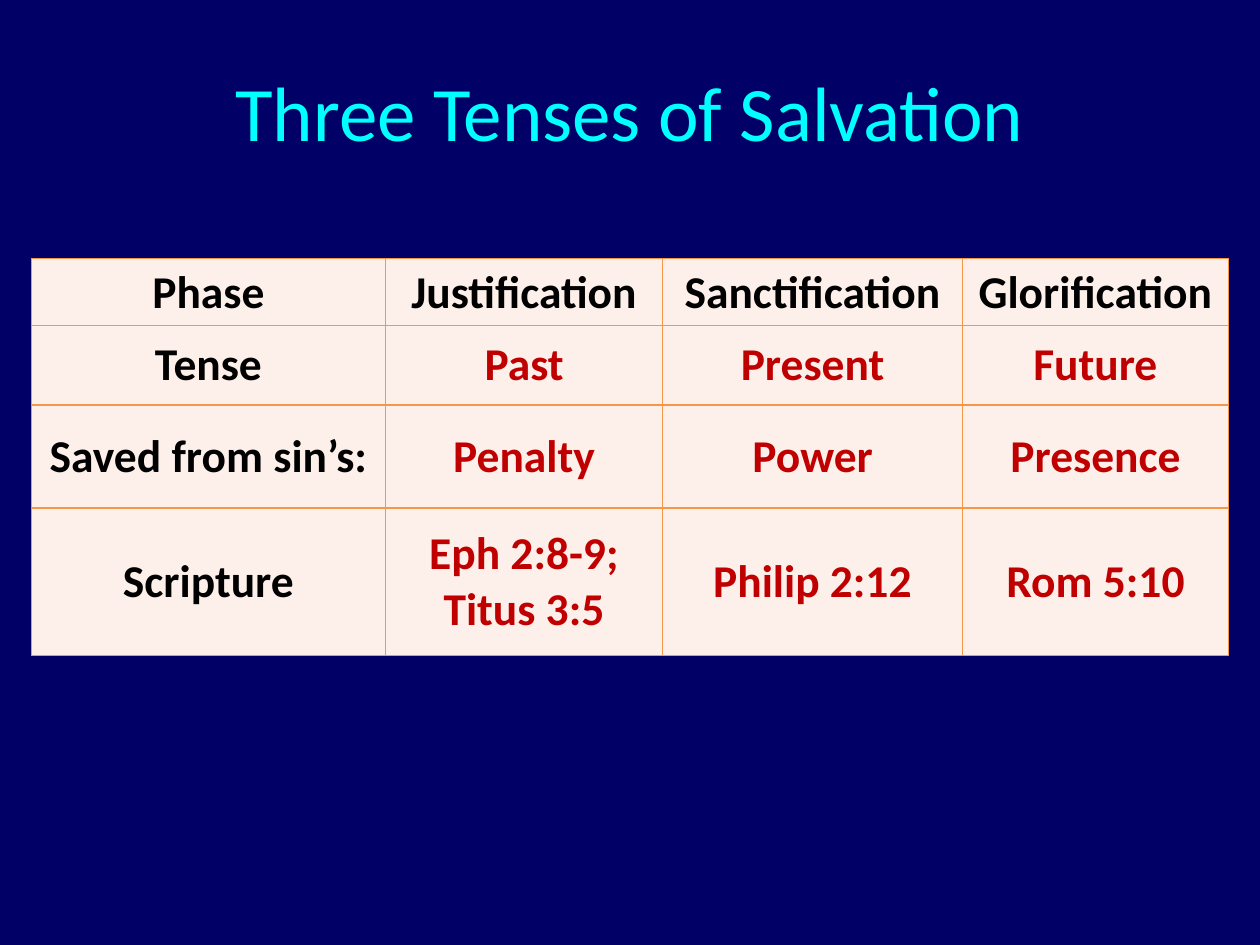
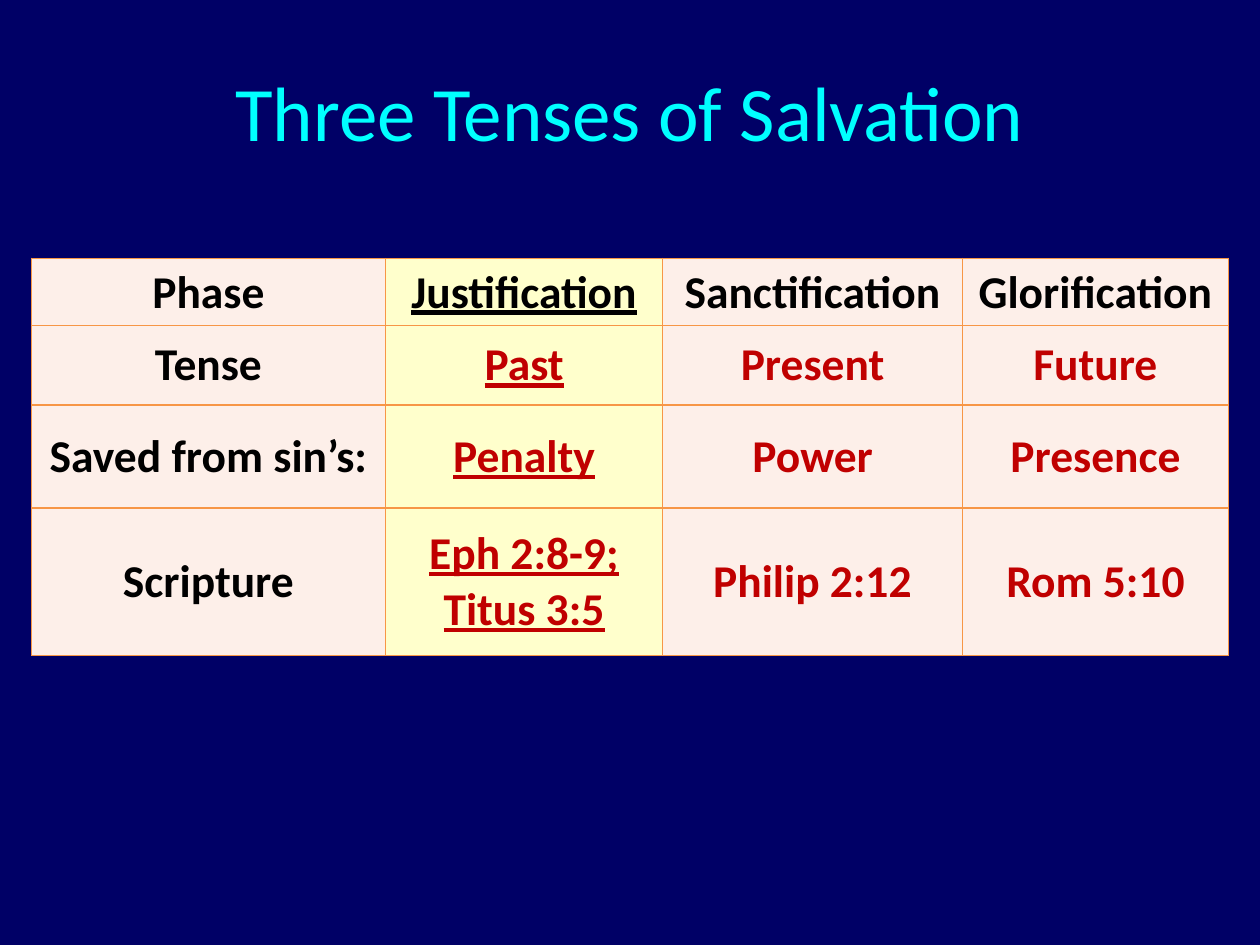
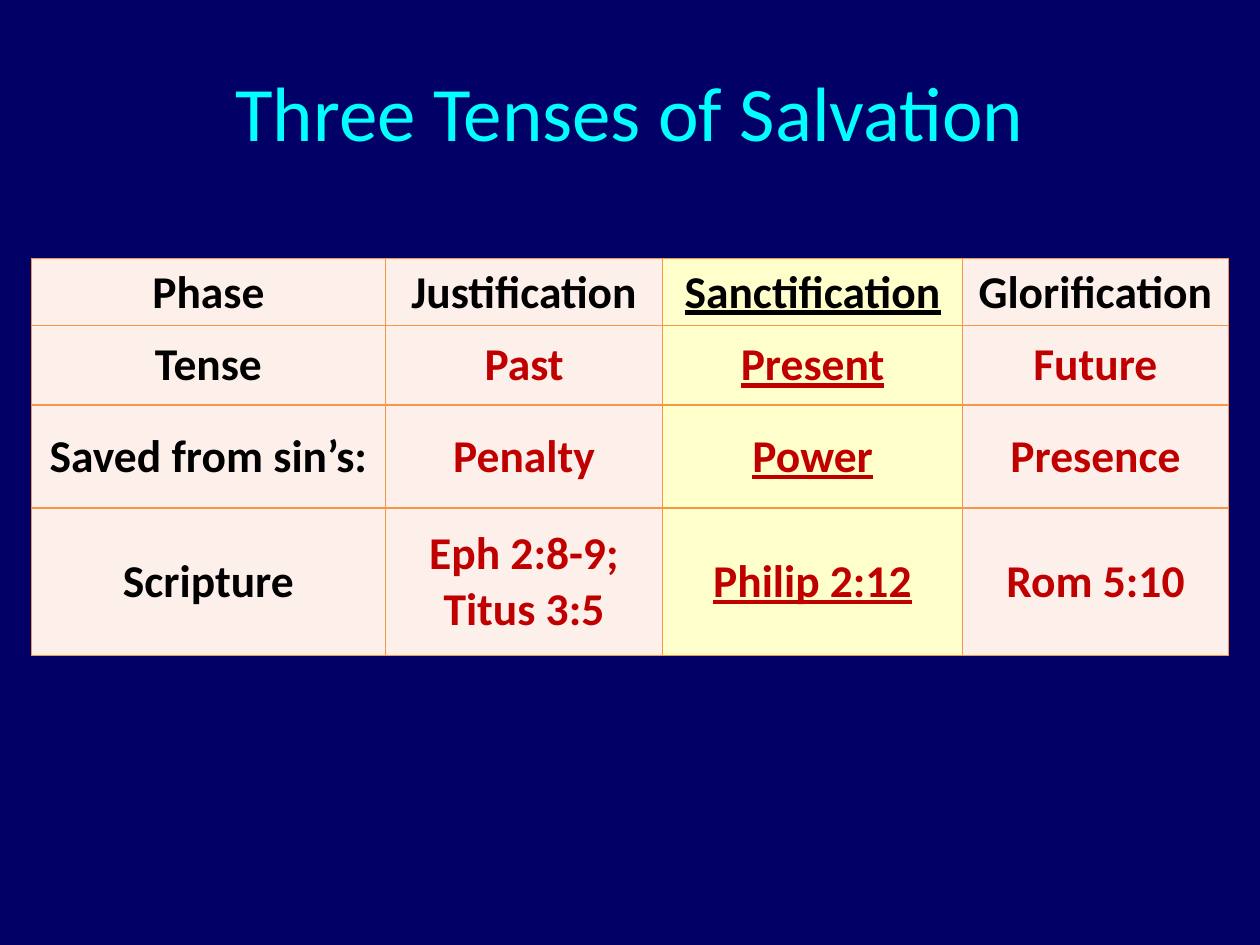
"""Builds three slides on the tenses of salvation, highlighting one phase at a time."""
from dataclasses import dataclass
from typing import Optional

from lxml import etree
from pptx import Presentation
from pptx.dml.color import RGBColor
from pptx.enum.text import MSO_ANCHOR, PP_ALIGN
from pptx.oxml.ns import qn
from pptx.util import Pt

CENTER = PP_ALIGN.CENTER
MIDDLE = MSO_ANCHOR.MIDDLE
FONT = "Calibri"
NAVY, CYAN, BLACK, RED = "000066", "00FFFF", "000000", "C00000"
PEACH, YELLOW, ORANGE = "FDEFE9", "FFFFCC", "F79646"

TITLE = "Three Tenses of Salvation"
COLUMN_WIDTHS = (202.32, 158.4, 171.36, 151.92)
ROW_HEIGHTS = (38.16, 45.36, 59.04, 84.24)
TENSES = (
    ("Phase", "Justification", "Sanctification", "Glorification"),
    ("Tense", "Past", "Present", "Future"),
    ("Saved from sin’s:", "Penalty", "Power", "Presence"),
    ("Scripture", "Eph 2:8-9; Titus 3:5", "Philip 2:12", "Rom 5:10"),
)


@dataclass(frozen=True)
class TextStyle:
    """Look of a piece of text."""
    size: float
    color: str
    bold: bool = False
    underline: bool = False


@dataclass(frozen=True)
class PhaseSlide:
    """One slide and the phase column it highlights."""
    highlighted_phase: Optional[str] = None


PHASE_SLIDES = (PhaseSlide(), PhaseSlide("Justification"), PhaseSlide("Sanctification"))


def rgb(color: str) -> RGBColor:
    """Turn a hex string into a colour."""
    return RGBColor.from_string(color)


def write(text_frame, text: str, style: TextStyle) -> None:
    """Fill a text frame with centred, styled text."""
    text_frame.text = text
    text_frame.word_wrap = True
    for paragraph in text_frame.paragraphs:
        paragraph.alignment = CENTER
        for run in paragraph.runs:
            run.font.name = FONT
            run.font.size = Pt(style.size)
            run.font.bold = style.bold
            run.font.underline = style.underline
            run.font.color.rgb = rgb(style.color)


def add_borders(cell, color: str, width: float) -> None:
    """Draw a line on all four sides of a cell."""
    properties = cell._tc.get_or_add_tcPr()
    for side in ("a:lnL", "a:lnR", "a:lnT", "a:lnB"):
        border = etree.SubElement(properties, qn(side), w=str(Pt(width)))
        solid = etree.SubElement(border, qn("a:solidFill"))
        etree.SubElement(solid, qn("a:srgbClr"), val=color)


def add_title(slide) -> None:
    """Place the shared title at the top of a slide."""
    title = slide.shapes.add_textbox(Pt(54), Pt(18), Pt(612), Pt(90))
    title.text_frame.vertical_anchor = MIDDLE
    write(title.text_frame, TITLE, TextStyle(44, CYAN))


def add_tense_table(slide, highlighted_phase: Optional[str]) -> None:
    """Draw the table of tenses with one phase highlighted."""
    table = slide.shapes.add_table(
        len(ROW_HEIGHTS), len(COLUMN_WIDTHS), Pt(18), Pt(147.6),
        Pt(sum(COLUMN_WIDTHS)), Pt(sum(ROW_HEIGHTS))).table
    table.first_row = False
    table.horz_banding = False
    for column, width in zip(table.columns, COLUMN_WIDTHS):
        column.width = Pt(width)
    for row, height in zip(table.rows, ROW_HEIGHTS):
        row.height = Pt(height)
    phases = TENSES[0]
    for row_index, entries in enumerate(TENSES):
        for column_index, entry in enumerate(entries):
            cell = table.cell(row_index, column_index)
            highlighted = phases[column_index] == highlighted_phase
            heading = row_index == 0 or column_index == 0
            add_borders(cell, ORANGE, 1)
            cell.fill.solid()
            cell.fill.fore_color.rgb = rgb(YELLOW if highlighted else PEACH)
            cell.vertical_anchor = MIDDLE
            write(cell.text_frame, entry,
                  TextStyle(26, BLACK if heading else RED, True, highlighted))


def main() -> None:
    """Build and save the presentation."""
    presentation = Presentation()
    presentation.slide_width, presentation.slide_height = Pt(720), Pt(540)
    blank_layout = presentation.slide_layouts[6]
    for phase_slide in PHASE_SLIDES:
        slide = presentation.slides.add_slide(blank_layout)
        slide.background.fill.solid()
        slide.background.fill.fore_color.rgb = rgb(NAVY)
        add_title(slide)
        add_tense_table(slide, phase_slide.highlighted_phase)
    presentation.save("out.pptx")


if __name__ == "__main__":
    main()
